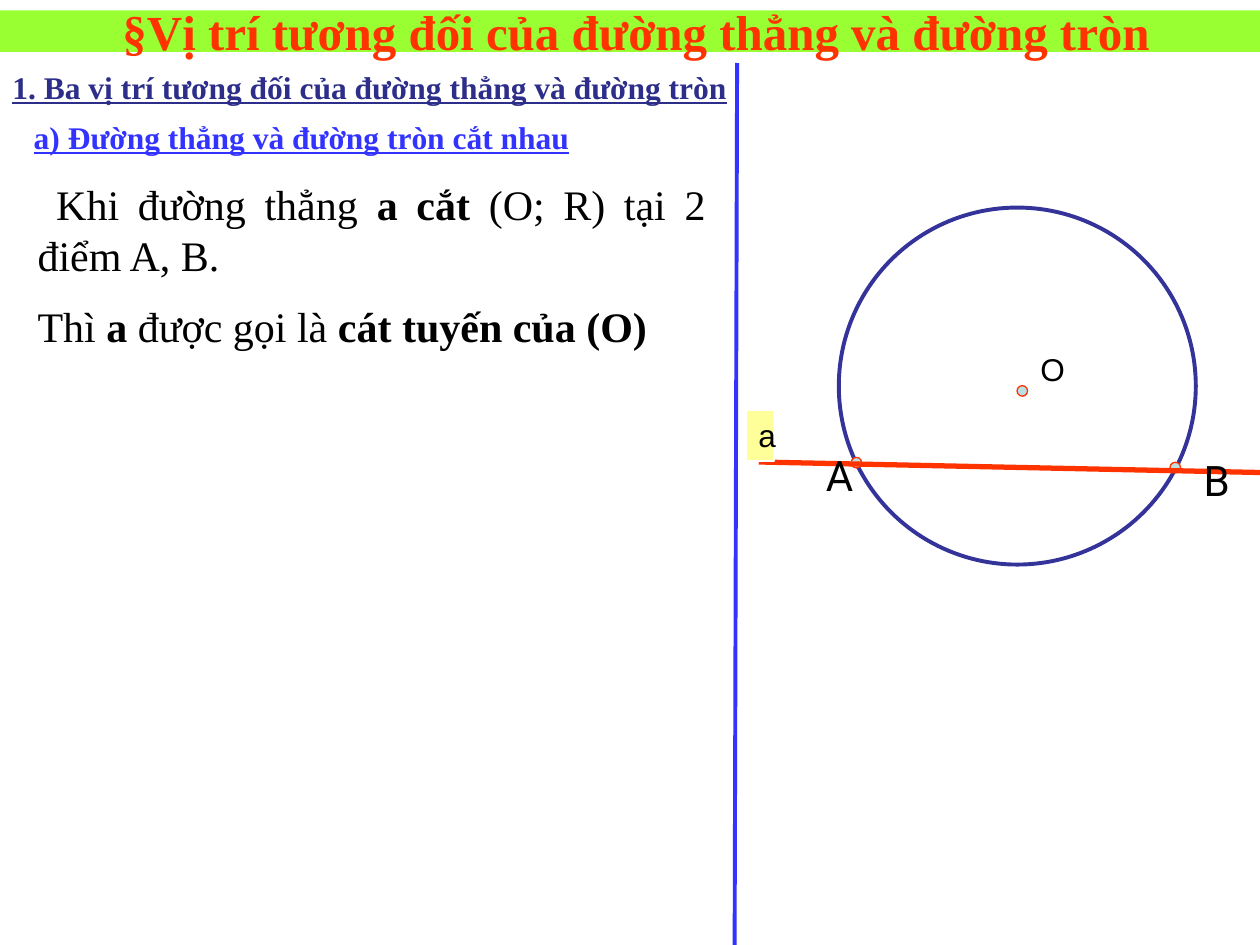
from dataclasses import dataclass
from typing import Optional

from lxml.etree import SubElement
from pptx import Presentation
from pptx.dml.color import RGBColor
from pptx.enum.shapes import MSO_CONNECTOR, MSO_SHAPE
from pptx.enum.text import MSO_ANCHOR, PP_ALIGN
from pptx.oxml.ns import qn
from pptx.util import Pt

RED = RGBColor(0xFF, 0x33, 0x00)
BLUE = RGBColor(0x33, 0x33, 0xFF)
NAVY = RGBColor(0x2D, 0x2D, 0x8A)
INDIGO = RGBColor(0x33, 0x33, 0x99)
GREEN = RGBColor(0x99, 0xFF, 0x33)
YELLOW = RGBColor(0xFF, 0xFF, 0x99)
PALE_BLUE = RGBColor(0xBB, 0xE0, 0xE3)
BLACK = RGBColor(0, 0, 0)
WHITE = RGBColor(0xFF, 0xFF, 0xFF)
SERIF = "Times New Roman"


@dataclass
class Box:
    left: float
    top: float
    width: float
    height: float


@dataclass
class Style:
    size: float
    font: str = SERIF
    color: RGBColor = BLACK
    bold: bool = False
    underline: bool = False
    align: PP_ALIGN = PP_ALIGN.LEFT
    space_before: float = 0


@dataclass
class Label:
    box: Box
    style: Style
    paragraphs: list  # each paragraph is a list of (text, bold) runs


def write_text(shape, paragraphs: list, style: Style, **frame_format) -> None:
    frame = shape.text_frame
    frame_values = {"word_wrap": True, "vertical_anchor": MSO_ANCHOR.TOP, **frame_format}
    for name, value in frame_values.items():
        setattr(frame, name, value)
    for index, runs in enumerate(paragraphs):
        paragraph = frame.add_paragraph() if index else frame.paragraphs[0]
        paragraph.alignment = style.align
        paragraph.space_before = Pt(style.space_before)
        for text, bold in runs:
            run = paragraph.add_run()
            run.text = text
            font_values = {"name": style.font, "size": Pt(style.size),
                           "bold": bold, "underline": style.underline}
            for name, value in font_values.items():
                setattr(run.font, name, value)
            run.font.color.rgb = style.color


def add_label(slide, label: Label) -> None:
    box = label.box
    shape = slide.shapes.add_textbox(Pt(box.left), Pt(box.top), Pt(box.width), Pt(box.height))
    write_text(shape, label.paragraphs, label.style)


def add_figure(slide, kind: MSO_SHAPE, box: Box, fill: Optional[RGBColor] = None,
               line: Optional[RGBColor] = None, weight: float = 0.75):
    shape = slide.shapes.add_shape(kind, Pt(box.left), Pt(box.top), Pt(box.width), Pt(box.height))
    shape.shadow.inherit = False
    if fill is None:
        shape.fill.background()
    else:
        shape.fill.solid()
        shape.fill.fore_color.rgb = fill
    if line is None:
        shape.line.fill.background()
    else:
        shape.line.color.rgb = line
        shape.line.width = Pt(weight)
    return shape


def add_line(slide, start: tuple, end: tuple, color: RGBColor, weight: float) -> None:
    connector = slide.shapes.add_connector(
        MSO_CONNECTOR.STRAIGHT, *(Pt(value) for value in start + end))
    connector.line.color.rgb = color
    connector.line.width = Pt(weight)
    SubElement(connector._element.spPr, qn("a:effectLst"))


HEADINGS = [
    Label(Box(12.2, 64.1, 381, 28.8), Style(18, color=BLUE, underline=True),
          [[("a) Đường thẳng và đường tròn cắt nhau", True)]]),
    Label(Box(0, 35.3, 456, 28.8), Style(18, color=NAVY, underline=True),
          [[("1. Ba vị trí tương đối của đường thẳng và đường tròn", True)]]),
]
DEFINITION = Label(
    Box(14.4, 98.6, 396, 152.6),
    Style(24, align=PP_ALIGN.JUSTIFY, space_before=12),
    [[(" Khi đường thẳng ", False), ("a cắt ", True), ("(O; R) tại 2 điểm A, B.", False)],
     [("Thì ", False), ("a ", True), ("được gọi là ", False), ("cát tuyến của (O)", True)]])
POINT_STYLE = Style(24, "Roboto", align=PP_ALIGN.RIGHT, space_before=12)
CENTER_LABEL = Label(Box(587.5, 196.6, 28.8, 28.8), Style(18, "Arial"), [[("O", False)]])
POINT_LABELS = [
    Label(Box(455.8, 253.4, 38.9, 36), POINT_STYLE, [[("A", False)]]),
    Label(Box(671, 256.3, 38.9, 57.6), POINT_STYLE, [[("B", False)]]),
]
DOT_SIZE = 6
DOTS = [(581.2, 220.4), (668.6, 264.2), (486.4, 261.4)]  # O, B, A


def main() -> None:
    presentation = Presentation()
    presentation.slide_width, presentation.slide_height = Pt(720), Pt(540)
    slide = presentation.slides.add_slide(presentation.slide_layouts[6])

    # Title band
    title = add_figure(slide, MSO_SHAPE.RECTANGLE, Box(0, 5.9, 720, 23.8), GREEN)
    write_text(title, [[(" §Vị trí tương đối của đường thẳng và đường tròn", True)]],
               Style(28, color=RED, align=PP_ALIGN.CENTER),
               vertical_anchor=MSO_ANCHOR.MIDDLE)

    # Divider and lesson text
    add_line(slide, (421.2, 36), (419.8, 540), BLUE, 2.25)
    for label in HEADINGS + [DEFINITION]:
        add_label(slide, label)

    # Circle with its centre and the two intersections
    add_figure(slide, MSO_SHAPE.OVAL, Box(479.3, 118.6, 204, 204), line=INDIGO, weight=2.25)
    for left, top in DOTS:
        add_figure(slide, MSO_SHAPE.OVAL, Box(left, top, DOT_SIZE, DOT_SIZE), PALE_BLUE, RED)
    add_label(slide, CENTER_LABEL)

    # Secant a and its name
    add_line(slide, (433.6, 264), (720, 270), RED, 3)
    secant_name = add_figure(slide, MSO_SHAPE.RECTANGLE, Box(426.3, 234.3, 16, 29.2),
                             YELLOW, WHITE)
    write_text(secant_name, [[("a", False)]], Style(18, "Arial"), margin_right=Pt(0))

    for label in POINT_LABELS:
        add_label(slide, label)

    presentation.save("out.pptx")


if __name__ == "__main__":
    main()
